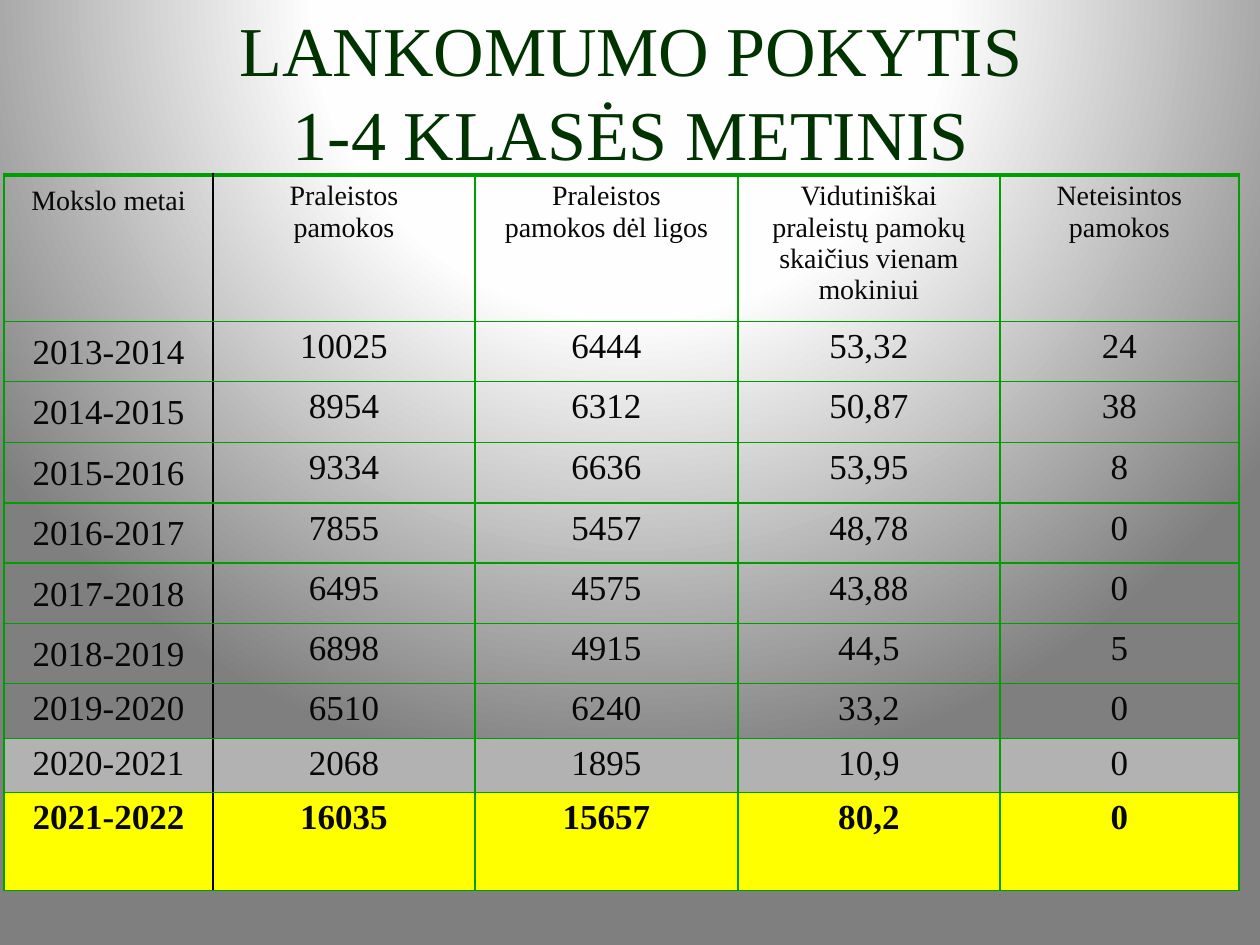
from pptx import Presentation, oxml, util as u
from pptx.dml.color import RGBColor
from pptx.enum import text
from pptx.oxml.ns import nsdecls

PX = 914400 // 126
GREEN, BLACK = "009F00", "000000"
HEADINGS = ["Mokslo metai", "Praleistos pamokos", "Praleistos pamokos dėl ligos",
            "Vidutiniškai praleistų pamokų skaičius vienam mokiniui",
            "Neteisintos pamokos"]
YEARS = [
    ["2013-2014", "10025", "6444", "53,32", "24"],
    ["2014-2015", "8954", "6312", "50,87", "38"],
    ["2015-2016", "9334", "6636", "53,95", "8"],
    ["2016-2017", "7855", "5457", "48,78", "0"],
    ["2017-2018", "6495", "4575", "43,88", "0"],
    ["2018-2019", "6898", "4915", "44,5", "5"],
    ["2019-2020", "6510", "6240", "33,2", "0"],
    ["2020-2021", "2068", "1895", "10,9", "0"],
    ["2021-2022", "16035", "15657", "80,2", "0"],
]
COLUMN_WIDTHS = [209, 262, 263, 262, 239]
ROW_HEIGHTS = [140, 59, 61, 60, 60, 60, 60, 55, 52, 98]
ROW_FILLS = {8: "B2B2B2", 9: "FFFF00"}


def rgb(value):
    return RGBColor.from_string(value)


def write(frame, words, size=20, color="080808", bold=False, spacing=None):
    frame.word_wrap = True
    paragraph = frame.paragraphs[0]
    paragraph.text = words
    paragraph.alignment = text.PP_ALIGN.CENTER
    if spacing:
        paragraph.line_spacing = spacing
    for run in paragraph.runs:
        run.font.name = "Times New Roman"
        run.font.size = u.Pt(size)
        run.font.bold = bold
        run.font.color.rgb = rgb(color)


class AttendanceSlide:
    """Draws the parts of a slide in one shared style."""

    def __init__(self, deck):
        self.slide = deck.slides.add_slide(deck.slide_layouts[6])

    def background(self, stops):
        marks = "".join(f'<a:gs pos="{pos * 1000}"><a:srgbClr val="{color}"/></a:gs>'
                        for pos, color in stops)
        self.slide.element.cSld.insert(0, oxml.parse_xml(
            f'<p:bg {nsdecls("p", "a")}><p:bgPr><a:gradFill rotWithShape="1">'
            f'<a:gsLst>{marks}</a:gsLst><a:path path="circle">'
            '<a:fillToRect l="50000" t="-80000" r="50000" b="180000"/></a:path>'
            '</a:gradFill><a:effectLst/></p:bgPr></p:bg>'))

    def title(self, words, left, top, width, height):
        box = self.slide.shapes.add_textbox(left * PX, top * PX, width * PX, height * PX)
        box.text_frame.vertical_anchor = text.MSO_ANCHOR.MIDDLE
        write(box.text_frame, words, size=40, color="003300")

    def borders(self, cell, **sides):
        for side, (color, points) in sides.items():
            cell._tc.get_or_add_tcPr().append(oxml.parse_xml(
                f'<a:ln{side} {nsdecls("a")} w="{u.Pt(points)}"><a:solidFill>'
                f'<a:srgbClr val="{color}"/></a:solidFill></a:ln{side}>'))

    def cell(self, cell, words, row, column):
        side_inset = 24 if column == 0 else 25 if row == 0 else 13
        cell.margin_left = cell.margin_right = side_inset * PX
        cell.margin_top = cell.margin_bottom = 6 * PX
        write(cell.text_frame, words, size=20 if row else 16, bold=row == len(YEARS),
              spacing=1.15 if column == 0 and row < 7 else None)
        self.borders(cell,
                     L=(BLACK if column == 1 else GREEN, 1),
                     R=(BLACK if column == 0 else GREEN, 1),
                     T=(GREEN, 1 if row else 3),
                     B=(GREEN, 1))
        if row in ROW_FILLS:
            cell.fill.solid()
            cell.fill.fore_color.rgb = rgb(ROW_FILLS[row])
        else:
            cell.fill.background()

    def table(self, rows, left, top):
        table = self.slide.shapes.add_table(
            len(rows), len(COLUMN_WIDTHS), left * PX, top * PX,
            sum(COLUMN_WIDTHS) * PX, sum(ROW_HEIGHTS) * PX).table
        table.first_row = table.horz_banding = False
        for column, width in zip(table.columns, COLUMN_WIDTHS):
            column.width = width * PX
        for r, (values, height) in enumerate(zip(rows, ROW_HEIGHTS)):
            table.rows[r].height = height * PX
            for c, value in enumerate(values):
                self.cell(table.cell(r, c), value, r, c)


def main():
    deck = Presentation()
    deck.slide_width, deck.slide_height = u.Inches(10), u.Inches(7.5)
    attendance = AttendanceSlide(deck)
    attendance.background([(0, "FFFFFF"), (40, "FEFEFE"), (100, "7F7F7F")])
    attendance.title("LANKOMUMO POKYTIS\v1-4 KLASĖS METINIS", 64, 16, 1134, 149)
    attendance.table([HEADINGS] + YEARS, 4, 175)
    deck.save("out.pptx")


if __name__ == "__main__":
    main()
